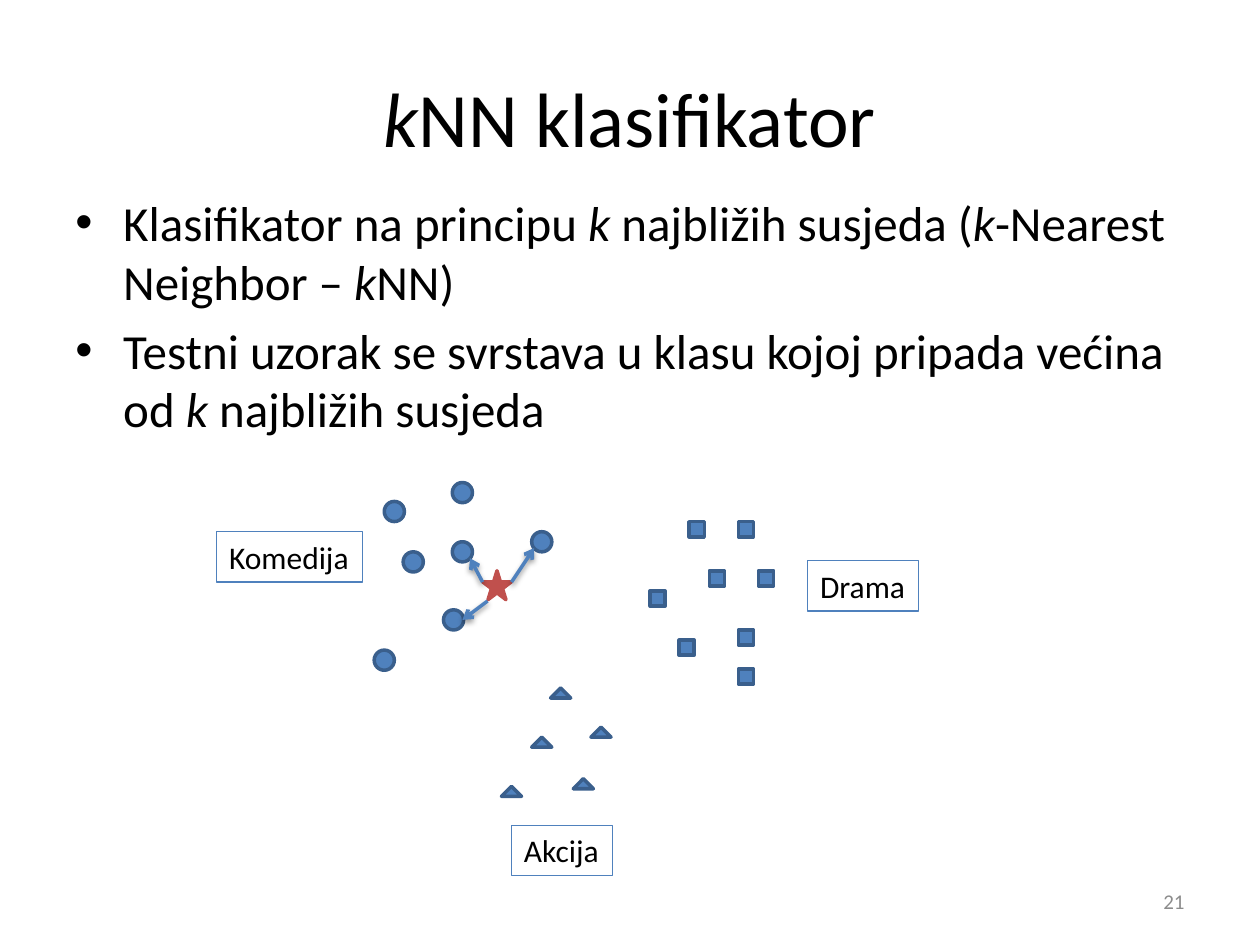
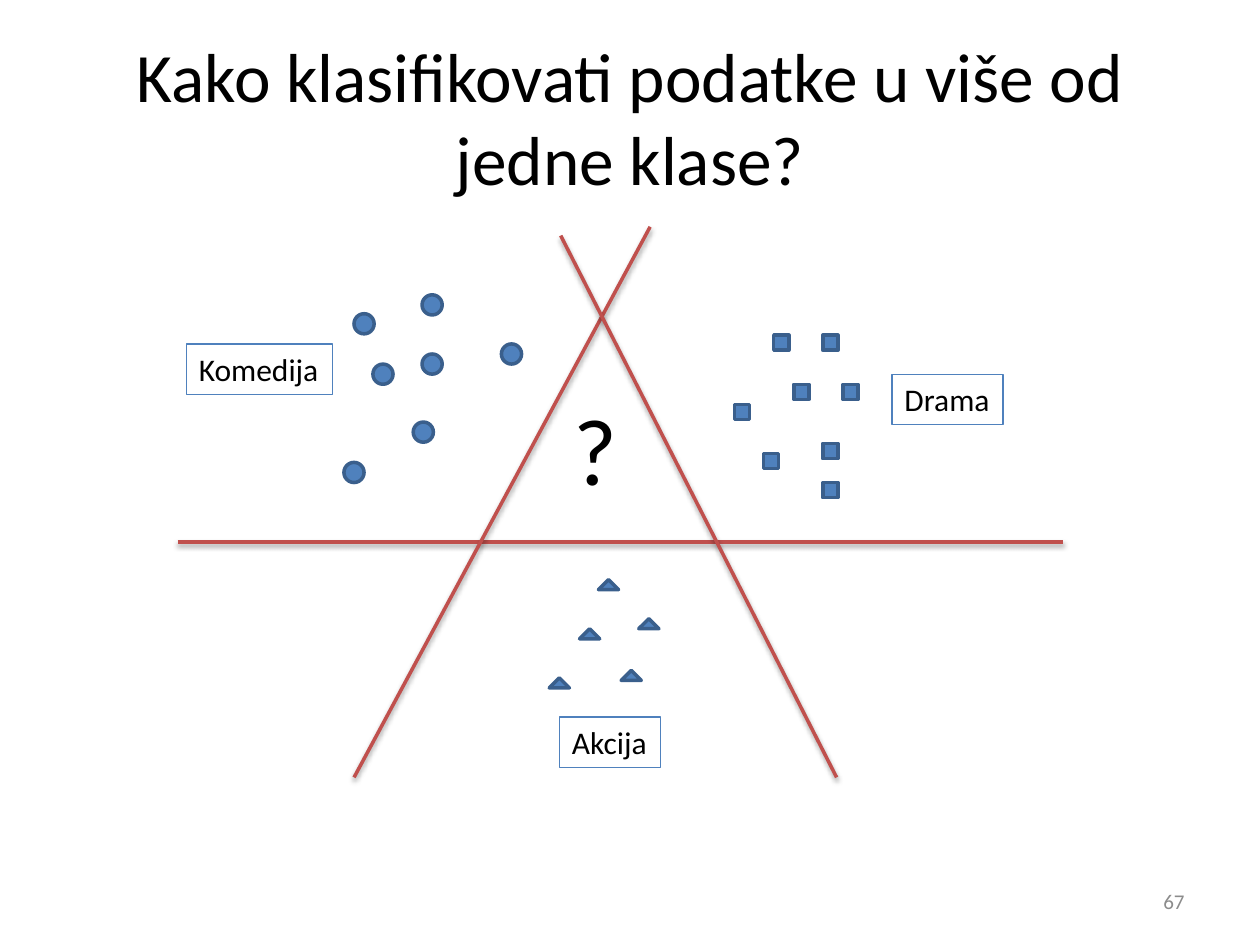
from lxml import etree
from pptx import Presentation
from pptx.dml.color import RGBColor
from pptx.enum.shapes import MSO_CONNECTOR, MSO_SHAPE
from pptx.enum.text import MSO_ANCHOR, MSO_AUTO_SIZE, PP_ALIGN
from pptx.oxml.ns import qn
from pptx.util import Inches, Pt

ELLIPSE, SQUARE = MSO_SHAPE.OVAL, MSO_SHAPE.RECTANGLE
TRIANGLE, STAR = MSO_SHAPE.ISOSCELES_TRIANGLE, MSO_SHAPE.STAR_5_POINT
STRAIGHT = MSO_CONNECTOR.STRAIGHT
LEFT, CENTER, RIGHT = PP_ALIGN.LEFT, PP_ALIGN.CENTER, PP_ALIGN.RIGHT
TOP, MIDDLE = MSO_ANCHOR.TOP, MSO_ANCHOR.MIDDLE

FONT = "Calibri"
BLACK, GRAY = "000000", "8C8C8C"
BLUE, DARK_BLUE, RED = "4F81BD", "3A5F8C", "C0504D"

TITLE_BOX = (0.5, 0.3, 9, 1.25)
BODY_BOX = (0.5, 1.48, 9, 2.03)
NUMBER_BOX = (7.17, 6.95, 2.33, 0.4)
QUESTION_BOX = (4.45, 3.05, 0.39, 1.01)
STAR_BOX = (3.83, 4.53, 0.23, 0.23)
BULLET_INDENT = 0.38
LABEL_HEIGHT = 0.4

# Text between asterisks is italic; offsets are measured from each class origin.
CLASSES = {
    "Komedija": {
        "marker": ELLIPSE, "size": (0.16, 0.16),
        "label_offset": (-1.25, 0.39), "label_width": 1.16,
        "offsets": [(0.08, 0.15), (0.62, 0.47), (0.55, 1.01), (1.25, 0.39),
                    (0.62, 0), (0.23, 0.55), (0, 1.33)],
    },
    "Drama": {
        "marker": SQUARE, "size": (0.12, 0.12),
        "label_offset": (1.25, 0.31), "label_width": 0.88,
        "offsets": [(0.31, 0), (0.47, 0.39), (0, 0.55), (0.7, 0),
                    (0.86, 0.39), (0.7, 1.17), (0.23, 0.94), (0.7, 0.86)],
    },
    "Akcija": {
        "marker": TRIANGLE, "size": (0.16, 0.08),
        "label_offset": (0.08, 1.09), "label_width": 0.8,
        "offsets": [(0.24, 0.39), (0.39, 0), (0.57, 0.72), (0.71, 0.31),
                    (0, 0.78)],
    },
}

NEIGHBOURS = {
    "title": "*k*NN klasifikator", "title_size": 44, "number": "21",
    "bullets": [
        "Klasifikator na principu *k* najbližih susjeda (*k*-Nearest Neighbor – *k*NN)",
        "Testni uzorak se svrstava u klasu kojoj pripada većina od *k* najbližih susjeda",
    ],
    "origins": {"Komedija": (2.97, 3.83), "Drama": (5.16, 4.14),
                "Akcija": (3.98, 5.46)},
    "arrows": [((3.83, 4.62), (3.73, 4.43)), ((3.87, 4.77), (3.67, 4.92)),
               ((4.06, 4.62), (4.24, 4.35))],
}
BOUNDARIES = {
    "title": "Kako klasifikovati podatke u više od jedne klase?",
    "title_size": 39.6, "number": "67",
    "origins": {"Komedija": (2.73, 2.34), "Drama": (5.83, 2.66),
                "Akcija": (4.36, 4.6)},
    "borders": [((1.41, 4.3), (8.44, 4.3)), ((5.16, 1.8), (2.81, 6.17)),
                ((4.45, 1.87), (6.64, 6.17))],
}


def color(value):
    return RGBColor.from_string(value)


def shifted(origin, offset):
    return tuple(start + step for start, step in zip(origin, offset))


def set_line(shape, line_color, width):
    shape.line.color.rgb = color(line_color)
    shape.line.width = Pt(width)


def write(paragraph, text, size, text_color=BLACK, align=LEFT):
    paragraph.alignment = align
    for index, part in enumerate(text.split("*")):
        if part:
            run = paragraph.add_run()
            run.text = part
            run.font.name = FONT
            run.font.size = Pt(size)
            run.font.italic = index % 2 == 1
            run.font.color.rgb = color(text_color)


def add_text(slide, box, text, size, text_color=BLACK, align=LEFT, anchor=TOP):
    frame = slide.shapes.add_textbox(*map(Inches, box)).text_frame
    frame.word_wrap = True
    frame.vertical_anchor = anchor
    write(frame.paragraphs[0], text, size, text_color, align)


def add_bullets(slide, bullets):
    frame = slide.shapes.add_textbox(*map(Inches, BODY_BOX)).text_frame
    frame.word_wrap = True
    for index, text in enumerate(bullets):
        paragraph = frame.add_paragraph() if index else frame.paragraphs[0]
        write(paragraph, text, 28)
        paragraph.space_before = Pt(5.6)
        properties = paragraph._p.get_or_add_pPr()
        properties.set("marL", str(Inches(BULLET_INDENT)))
        properties.set("indent", str(-Inches(BULLET_INDENT)))
        etree.SubElement(properties, qn("a:buFont"), typeface="Arial")
        etree.SubElement(properties, qn("a:buChar"), char="•")


def add_marker(slide, kind, box, fill, line_color):
    marker = slide.shapes.add_shape(kind, *map(Inches, box))
    marker.shadow.inherit = False
    marker.fill.solid()
    marker.fill.fore_color.rgb = color(fill)
    set_line(marker, line_color, 2)


def add_label(slide, text, position, width):
    box = (*position, width, LABEL_HEIGHT)
    label = slide.shapes.add_shape(SQUARE, *map(Inches, box))
    label.shadow.inherit = False
    label.fill.background()
    set_line(label, BLUE, 0.75)
    frame = label.text_frame
    frame.word_wrap = False
    frame.auto_size = MSO_AUTO_SIZE.SHAPE_TO_FIT_TEXT
    frame.vertical_anchor = TOP
    write(frame.paragraphs[0], text, 18)


def add_line(slide, start, end, line_color, arrow=False):
    connector = slide.shapes.add_connector(STRAIGHT, *map(Inches, (*start, *end)))
    set_line(connector, line_color, 2)
    if arrow:
        etree.SubElement(connector.line._get_or_add_ln(), qn("a:tailEnd"), type="arrow")
    effects = etree.SubElement(connector._element.spPr, qn("a:effectLst"))
    shadow = etree.SubElement(effects, qn("a:outerShdw"), blurRad=str(Pt(3.1)),
                              dist=str(Pt(1.6)), dir="5400000", rotWithShape="0")
    shade = etree.SubElement(shadow, qn("a:srgbClr"), val=BLACK)
    etree.SubElement(shade, qn("a:alpha"), val="38000")


def add_classes(slide, origins):
    for name, origin in origins.items():
        group = CLASSES[name]
        for offset in group["offsets"]:
            box = (*shifted(origin, offset), *group["size"])
            add_marker(slide, group["marker"], box, BLUE, DARK_BLUE)
    for name, origin in origins.items():
        group = CLASSES[name]
        add_label(slide, name, shifted(origin, group["label_offset"]),
                  group["label_width"])


def add_base(presentation, content):
    slide = presentation.slides.add_slide(presentation.slide_layouts[6])
    add_text(slide, TITLE_BOX, content["title"], content["title_size"],
             align=CENTER, anchor=MIDDLE)
    if "bullets" in content:
        add_bullets(slide, content["bullets"])
    add_classes(slide, content["origins"])
    add_text(slide, NUMBER_BOX, content["number"], 12, GRAY, RIGHT, MIDDLE)
    return slide


def main():
    presentation = Presentation()
    presentation.slide_width = Inches(10)
    presentation.slide_height = Inches(7.5)

    slide = add_base(presentation, NEIGHBOURS)
    add_marker(slide, STAR, STAR_BOX, RED, RED)
    for start, end in NEIGHBOURS["arrows"]:
        add_line(slide, start, end, BLUE, arrow=True)

    slide = add_base(presentation, BOUNDARIES)
    for start, end in BOUNDARIES["borders"]:
        add_line(slide, start, end, RED)
    add_text(slide, QUESTION_BOX, "?", 54)

    presentation.save("out.pptx")


if __name__ == "__main__":
    main()
